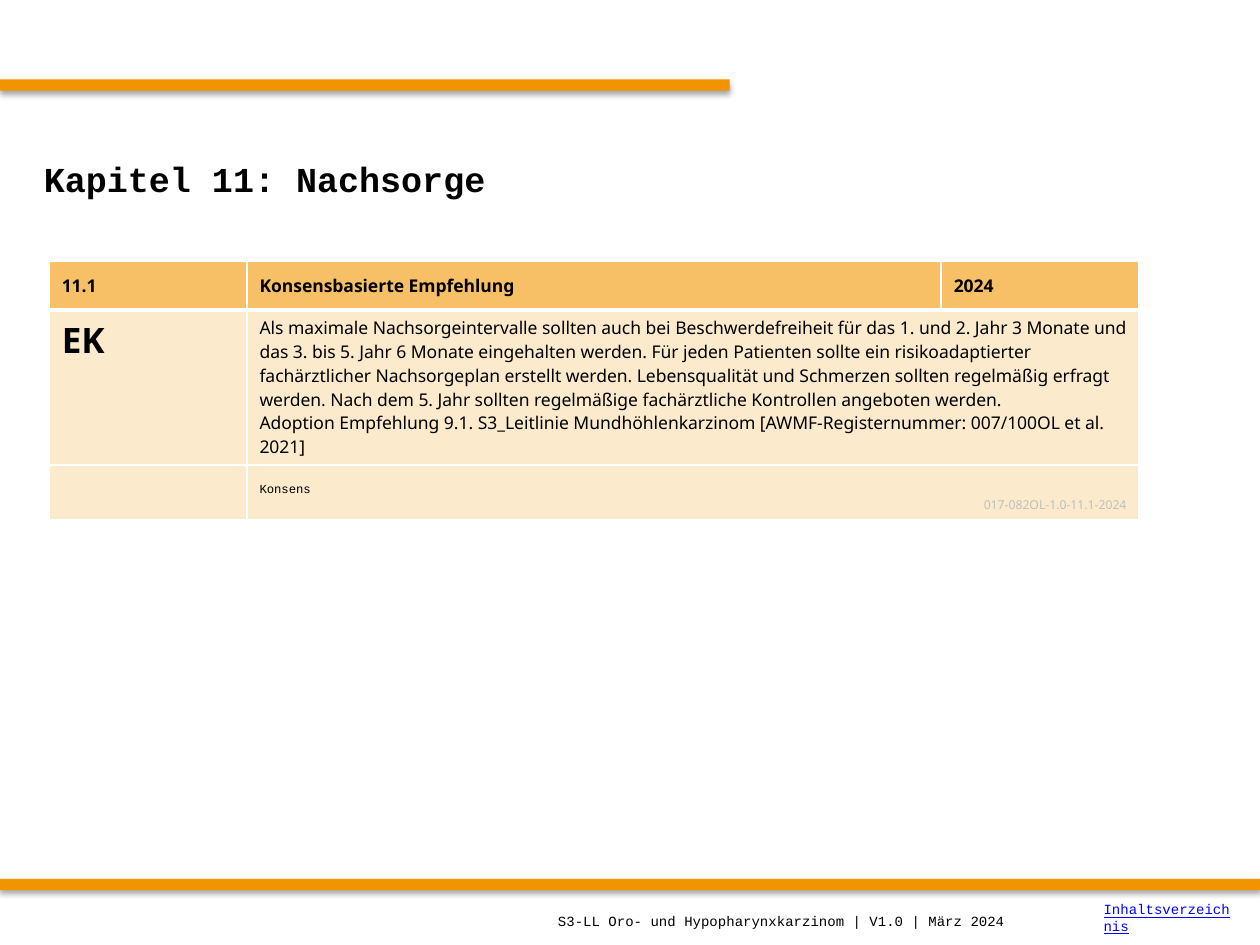
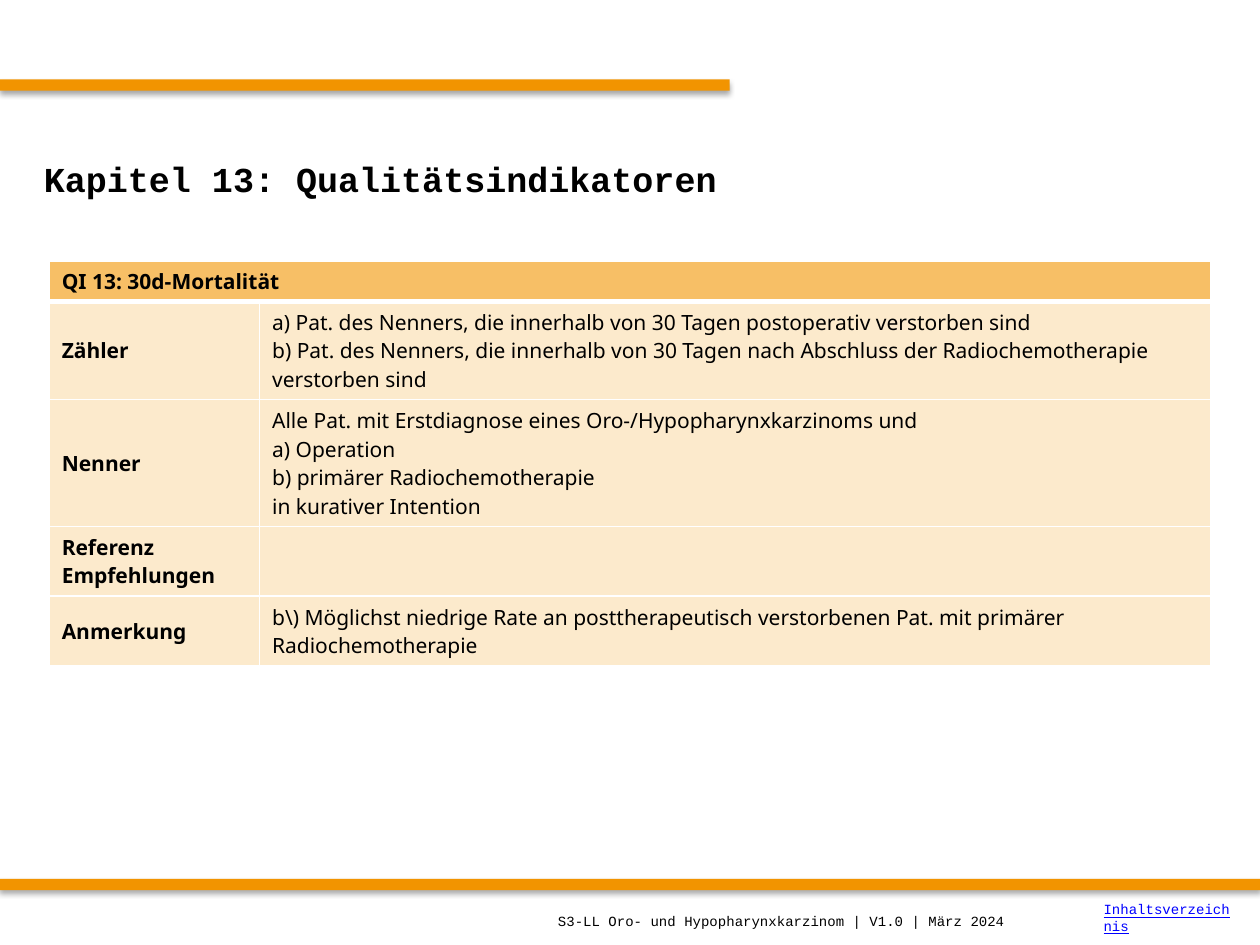
from lxml import etree
from pptx import Presentation
from pptx.dml.color import RGBColor
from pptx.enum.shapes import MSO_SHAPE
from pptx.enum.text import MSO_ANCHOR, PP_ALIGN
from pptx.oxml.ns import qn
from pptx.util import Inches, Pt

RECT = MSO_SHAPE.RECTANGLE
TOP, MIDDLE, BOTTOM = MSO_ANCHOR.TOP, MSO_ANCHOR.MIDDLE, MSO_ANCHOR.BOTTOM
RIGHT = PP_ALIGN.RIGHT

W, H = Inches(10), Inches(7.5)
MONO, SANS = "Courier New", "Noto Sans"
COLORS = {
    "bar": "F29400",
    "header": "F7BF66",
    "body": "FCEACC",
    "border": "FFFFFF",
    "text": "000000",
    "link": "0000FF",
    "code": "BFBFBF",
}
TABLE_LEFT, TABLE_TOP = 3.9, 27.6
FOOTER = "S3-LL Oro- und Hypopharynxkarzinom | V1.0 | März 2024"

NACHSORGE = [
    "Als maximale Nachsorgeintervalle sollten auch bei Beschwerdefreiheit für das "
    "1. und 2. Jahr 3 Monate und das 3. bis 5. Jahr 6 Monate eingehalten werden. "
    "Für jeden Patienten sollte ein risikoadaptierter fachärztlicher Nachsorgeplan "
    "erstellt werden. Lebensqualität und Schmerzen sollten regelmäßig erfragt werden. "
    "Nach dem 5. Jahr sollten regelmäßige fachärztliche Kontrollen angeboten werden.",
    "Adoption Empfehlung 9.1. S3_Leitlinie Mundhöhlenkarzinom "
    "[AWMF-Registernummer: 007/100OL et al. 2021]",
]
INDICATOR_ROWS = [
    ("Zähler",
     "a) Pat. des Nenners, die innerhalb von 30 Tagen postoperativ verstorben sind\v"
     "b) Pat. des Nenners, die innerhalb von 30 Tagen nach Abschluss der "
     "Radiochemotherapie verstorben sind"),
    ("Nenner",
     "Alle Pat. mit Erstdiagnose eines Oro-/Hypopharynxkarzinoms und\v"
     "a) Operation\vb) primärer Radiochemotherapie\vin kurativer Intention"),
    ("Referenz\vEmpfehlungen", ""),
    ("Anmerkung",
     "b\\) Möglichst niedrige Rate an posttherapeutisch verstorbenen Pat. mit "
     "primärer Radiochemotherapie"),
]


def px(percent):
    return int(W * percent / 100)


def py(percent):
    return int(H * percent / 100)


def box(x, y, w, h):
    return px(x), py(y), px(w), py(h)


def rgb(name):
    return RGBColor.from_string(COLORS[name])


def style(p, size, font=SANS, bold=False, color="text", underline=False):
    for r in p.runs:
        r.font.size = Pt(size)
        r.font.name = font
        r.font.bold = bold
        r.font.underline = underline
        r.font.color.rgb = rgb(color)


def add_bar(slide, y, w):
    sp = slide.shapes.add_shape(RECT, *box(0, y, w, 1.2))
    sp.fill.solid()
    sp.fill.fore_color.rgb = rgb("bar")
    sp.line.fill.background()
    sp.shadow.inherit = False
    effects = sp._element.spPr.find(qn("a:effectLst"))
    shadow = etree.SubElement(effects, qn("a:outerShdw"), blurRad=str(Pt(3.1)),
                              dist=str(Pt(1.8)), dir="5400000", rotWithShape="0")
    color = etree.SubElement(shadow, qn("a:srgbClr"), val=COLORS["text"])
    etree.SubElement(color, qn("a:alpha"), val="35000")


def add_text(slide, text, area, size, **look):
    tf = slide.shapes.add_textbox(*box(*area)).text_frame
    tf.word_wrap = True
    tf.vertical_anchor = MIDDLE
    tf.text = text
    style(tf.paragraphs[0], size, MONO, **look)


def add_slide(prs, title):
    slide = prs.slides.add_slide(prs.slide_layouts[6])
    add_bar(slide, 8.4, 57.9)
    add_bar(slide, 93, 100)
    add_text(slide, title, (2.5, 11.1, 95, 15.6), 20, bold=True)
    add_text(slide, FOOTER, (43.3, 94.8, 55.1, 5.2), 8)
    add_text(slide, "Inhaltsverzeichnis", (86.6, 94.5, 12.2, 5.2), 8,
             color="link", underline=True)
    return slide


def set_borders(cell, widths):
    tcPr = cell._tc.get_or_add_tcPr()
    for i, (side, width) in enumerate(widths.items()):
        ln = etree.Element(qn(f"a:ln{side}"), w=str(Pt(width)))
        fill = etree.SubElement(ln, qn("a:solidFill"))
        etree.SubElement(fill, qn("a:srgbClr"), val=COLORS["border"])
        tcPr.insert(i, ln)


def add_table(slide, col_widths, row_heights):
    frame = slide.shapes.add_table(
        len(row_heights), len(col_widths),
        *box(TABLE_LEFT, TABLE_TOP, sum(col_widths), sum(row_heights)))
    table = frame.table
    for col, width in zip(table.columns, col_widths):
        col.width = px(width)
    for i, (row, height) in enumerate(zip(table.rows, row_heights)):
        row.height = py(height)
        for cell in row.cells:
            cell.fill.solid()
            cell.fill.fore_color.rgb = rgb("body" if i else "header")
            set_borders(cell, {"L": 1, "R": 1, "T": 1 if i != 1 else 3,
                               "B": 1 if i else 3})
    return table


def fill_cell(cell, text, size, anchor=MIDDLE, **look):
    cell.vertical_anchor = anchor
    cell.text_frame.text = text
    for p in cell.text_frame.paragraphs:
        style(p, size, **look)


def add_recommendation(slide):
    table = add_table(slide, (15.7, 55.1, 15.7), (5.2, 16.4, 5.8))
    for row in (1, 2):
        table.cell(row, 1).merge(table.cell(row, 2))
    for col, text in enumerate(("11.1", "Konsensbasierte Empfehlung", "2024")):
        fill_cell(table.cell(0, col), text, 10, bold=True)
    fill_cell(table.cell(1, 0), "EK", 20, TOP, bold=True)
    fill_cell(table.cell(1, 1), "\n".join(NACHSORGE), 10, TOP)
    consensus = table.cell(2, 1)
    fill_cell(consensus, "Konsens\n017-082OL-1.0-11.1-2024", 7, BOTTOM, font=MONO)
    code = consensus.text_frame.paragraphs[1]
    code.alignment = RIGHT
    style(code, 7, color="code")


def add_indicator(slide):
    table = add_table(slide, (16.7, 75.5), (4.3, 10.4, 13.4, 7.4, 7.4))
    table.cell(0, 0).merge(table.cell(0, 1))
    fill_cell(table.cell(0, 0), "QI 13: 30d-Mortalität", 12, bold=True)
    for row, (label, text) in enumerate(INDICATOR_ROWS, 1):
        fill_cell(table.cell(row, 0), label, 12, bold=True)
        if text:
            fill_cell(table.cell(row, 1), text, 12)


def main():
    prs = Presentation()
    prs.slide_width, prs.slide_height = W, H
    add_recommendation(add_slide(prs, "Kapitel 11: Nachsorge"))
    add_indicator(add_slide(prs, "Kapitel 13: Qualitätsindikatoren"))
    prs.save("out.pptx")


if __name__ == "__main__":
    main()
